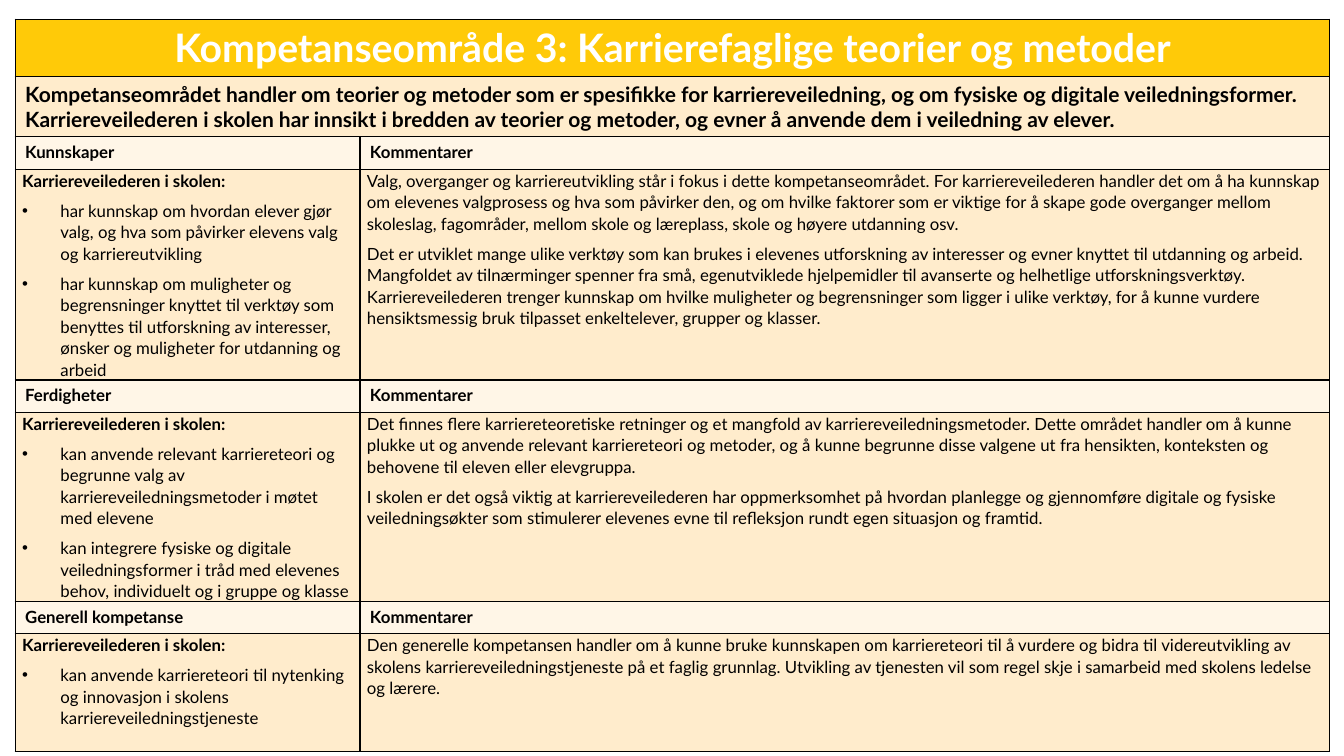
import pptx
import pptx.dml.color
import pptx.enum.text
import pptx.oxml
import pptx.oxml.ns
import pptx.util
from pptx.util import Inches

FONT = "Lato"
BLACK, WHITE = "000000", "FFFFFF"
GOLD, SAND, CREAM = "FFCA08", "FFECCC", "FFF6E7"
COLUMN_WIDTHS = [3.42, 9.62]
ROW_HEIGHTS = [0.56, 0.57, 0.32, 1.54, 0.32, 1.75, 0.32, 1.17]
TITLE = "Kompetanseområde 3: Karrierefaglige teorier og metoder"
SUMMARY = (
    "Kompetanseområdet handler om teorier og metoder som er spesifikke for karriereveiledning, "
    "og om fysiske og digitale veiledningsformer. Karriereveilederen i skolen har innsikt i bredden "
    "av teorier og metoder, og evner å anvende dem i veiledning av elever."
)
SECTIONS = [
    (
        "Kunnskaper",
        [
            "har kunnskap om hvordan elever gjør valg, og hva som påvirker elevens valg og "
            "karriereutvikling",
            "har kunnskap om muligheter og begrensninger knyttet til verktøy som benyttes til "
            "utforskning av interesser, ønsker og muligheter for utdanning og arbeid",
        ],
        [
            "Valg, overganger og karriereutvikling står i fokus i dette kompetanseområdet. For "
            "karriereveilederen handler det om å ha kunnskap om elevenes valgprosess og hva som "
            "påvirker den, og om hvilke faktorer som er viktige for å skape gode overganger mellom "
            "skoleslag, fagområder, mellom skole og læreplass, skole og høyere utdanning osv.",
            "Det er utviklet mange ulike verktøy som kan brukes i elevenes utforskning av interesser "
            "og evner knyttet til utdanning og arbeid. Mangfoldet av tilnærminger spenner fra små, "
            "egenutviklede hjelpemidler til avanserte og helhetlige utforskningsverktøy. "
            "Karriereveilederen trenger kunnskap om hvilke muligheter og begrensninger som ligger i "
            "ulike verktøy, for å kunne vurdere hensiktsmessig bruk tilpasset enkeltelever, grupper "
            "og klasser.",
        ],
    ),
    (
        "Ferdigheter",
        [
            "kan anvende relevant karriereteori og begrunne valg av karriereveiledningsmetoder i "
            "møtet med elevene",
            "kan integrere fysiske og digitale veiledningsformer i tråd med elevenes behov, "
            "individuelt og i gruppe og klasse",
        ],
        [
            "Det finnes flere karriereteoretiske retninger og et mangfold av "
            "karriereveiledningsmetoder. Dette området handler om å kunne plukke ut og anvende "
            "relevant karriereteori og metoder, og å kunne begrunne disse valgene ut fra hensikten, "
            "konteksten og behovene til eleven eller elevgruppa.",
            "I skolen er det også viktig at karriereveilederen har oppmerksomhet på hvordan planlegge "
            "og gjennomføre digitale og fysiske veiledningsøkter som stimulerer elevenes evne til "
            "refleksjon rundt egen situasjon og framtid.",
        ],
    ),
    (
        "Generell kompetanse",
        [
            "kan anvende karriereteori til nytenking og innovasjon i skolens "
            "karriereveiledningstjeneste",
        ],
        [
            "Den generelle kompetansen handler om å kunne bruke kunnskapen om karriereteori til å "
            "vurdere og bidra til videreutvikling av skolens karriereveiledningstjeneste på et faglig "
            "grunnlag. Utvikling av tjenesten vil som regel skje i samarbeid med skolens ledelse og "
            "lærere.",
        ],
    ),
]


def rgb(value):
    """Return the colour for a hex string."""
    return pptx.dml.color.RGBColor.from_string(value)


def write_text(paragraph, text, size=12, bold=False, color=BLACK, centered=False,
               body=False, bullet=False):
    """Write formatted text into a paragraph."""
    if centered:
        paragraph.alignment = pptx.enum.text.PP_ALIGN.CENTER
    if body:
        paragraph.line_spacing = 1.07
        paragraph.space_after = pptx.util.Pt(6)
    if bullet:
        add_bullet(paragraph)
    run = paragraph.add_run()
    run.text = text
    run.font.name = FONT
    run.font.size = pptx.util.Pt(size)
    run.font.bold = bold
    run.font.color.rgb = rgb(color)


def add_bullet(paragraph):
    """Give a paragraph a hanging bullet."""
    properties = paragraph._p.get_or_add_pPr()
    properties.set("marL", str(Inches(0.38)))
    properties.set("indent", str(-Inches(0.38)))
    namespace = pptx.oxml.ns.nsdecls("a")
    for element in ('buFont %s typeface="Arial"', 'buChar %s char="•"'):
        properties.append(pptx.oxml.parse_xml(f"<a:{element % namespace}/>"))


def style_cell(cell, fill):
    """Give a cell black borders and a solid fill."""
    properties = cell._tc.get_or_add_tcPr()
    for side in ("lnL", "lnR", "lnT", "lnB"):
        properties.append(pptx.oxml.parse_xml(
            f'<a:{side} {pptx.oxml.ns.nsdecls("a")} w="{pptx.util.Pt(1)}">'
            f'<a:solidFill><a:srgbClr val="{BLACK}"/></a:solidFill></a:{side}>'
        ))
    cell.fill.solid()
    cell.fill.fore_color.rgb = rgb(fill)


def fill_wide_row(table, row, text, fill, **text_format):
    """Fill a row merged across both columns."""
    table.cell(row, 0).merge(table.cell(row, 1))
    for column in range(2):
        style_cell(table.cell(row, column), fill)
    write_text(table.cell(row, 0).text_frame.paragraphs[0], text, bold=True, **text_format)


def fill_heading(cell, text):
    """Fill a section heading cell."""
    style_cell(cell, CREAM)
    write_text(cell.text_frame.paragraphs[0], text, bold=True)


def fill_body(cell, texts, lead=None):
    """Fill a body cell with paragraphs, or with a bold lead and bullets."""
    style_cell(cell, SAND)
    cell.margin_left = cell.margin_right = Inches(0.07)
    cell.margin_top = cell.margin_bottom = 0
    paragraph = cell.text_frame.paragraphs[0]
    if lead:
        write_text(paragraph, lead, bold=True, body=True)
    for index, text in enumerate(texts):
        if index or lead:
            paragraph = cell.text_frame.add_paragraph()
        write_text(paragraph, text, body=True, bullet=bool(lead))


def add_competence_table(slide):
    """Add the empty competence table."""
    shape = slide.shapes.add_table(
        len(ROW_HEIGHTS), len(COLUMN_WIDTHS), Inches(0.15), Inches(0.19),
        Inches(sum(COLUMN_WIDTHS)), Inches(sum(ROW_HEIGHTS)),
    )
    table = shape.table
    table.first_row = table.horz_banding = False
    for column, width in zip(table.columns, COLUMN_WIDTHS):
        column.width = Inches(width)
    for row, height in zip(table.rows, ROW_HEIGHTS):
        row.height = Inches(height)
    return table


def main():
    """Build and save the presentation."""
    presentation = pptx.Presentation()
    presentation.slide_width = Inches(13.33)
    presentation.slide_height = Inches(7.5)
    slide = presentation.slides.add_slide(presentation.slide_layouts[6])
    table = add_competence_table(slide)
    fill_wide_row(table, 0, TITLE, GOLD, size=28, color=WHITE, centered=True)
    fill_wide_row(table, 1, SUMMARY, SAND, size=15)
    for index, (heading, goals, comments) in enumerate(SECTIONS):
        row = 2 + 2 * index
        fill_heading(table.cell(row, 0), heading)
        fill_heading(table.cell(row, 1), "Kommentarer")
        fill_body(table.cell(row + 1, 0), goals, lead="Karriereveilederen i skolen:")
        fill_body(table.cell(row + 1, 1), comments)
    presentation.save("out.pptx")


if __name__ == "__main__":
    main()
